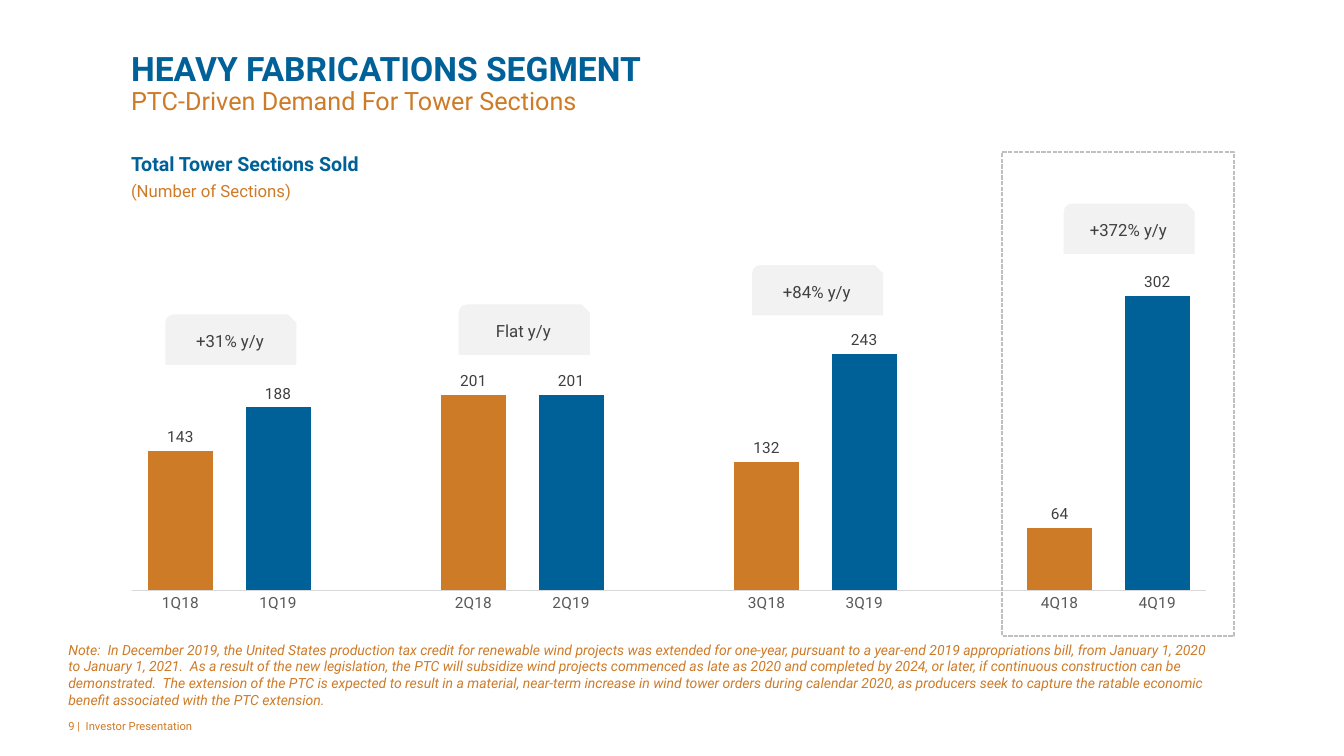
from lxml import etree
from pptx import Presentation
from pptx.chart.data import CategoryChartData as ChartData
from pptx.dml.color import RGBColor as RGB
from pptx.enum.chart import XL_CHART_TYPE as Chart, XL_LABEL_POSITION as Spot
from pptx.enum.chart import XL_TICK_MARK as Tick
from pptx.enum.dml import MSO_LINE as Dash
from pptx.enum.shapes import MSO_SHAPE as Shape
from pptx.enum.text import MSO_ANCHOR as Anchor, PP_ALIGN as Align
from pptx.oxml.ns import qn
from pptx.util import Emu, Pt

FONT = "Roboto"
BLUE, ORANGE = RGB(0x00, 0x61, 0x98), RGB(0xCE, 0x7B, 0x28)
WHITE, PALE = RGB(0xFF, 0xFF, 0xFF), RGB(0xF2, 0xF2, 0xF2)
DARK, GRAY = RGB(0x40, 0x40, 0x40), RGB(0x59, 0x59, 0x59)
RULE, EDGE = RGB(0xD9, 0xD9, 0xD9), RGB(0xBF, 0xBF, 0xBF)

# Each line of text: wording, size, colour, bold, italic
TITLE = [("HEAVY FABRICATIONS SEGMENT", 24, BLUE, True, False),
         ("PTC-Driven Demand For Tower Sections", 18, ORANGE, False, False)]
HEAD = [("Total Tower Sections Sold", 14, BLUE, True, False),
        ("(Number of Sections)", 12, ORANGE, False, False)]
FOOT = [("9 |  Investor Presentation", 8, ORANGE, False, False)]
NOTE = [(
    "Note:  In December 2019, the United States production tax credit for "
    "renewable wind projects was extended for one-year, pursuant to a year-end "
    "2019 appropriations bill, from January 1, 2020 to January 1, 2021.  As a "
    "result of the new legislation, the PTC will subsidize wind projects "
    "commenced as late as 2020 and completed by 2024, or later, if continuous "
    "construction can be demonstrated.  The extension of the PTC is expected to "
    "result in a material, near-term increase in wind tower orders during "
    "calendar 2020, as producers seek to capture the ratable economic benefit "
    "associated with the PTC extension.", 10, ORANGE, False, True)]

# Quarter, sections in 2018 and 2019, then the tag's wording, left and top
SALES = [("1Q", 143, 188, "+31% y/y", 164, 312),
         ("2Q", 201, 201, "Flat y/y", 455, 302),
         ("3Q", 132, 243, "+84% y/y", 746, 263),
         ("4Q", 64, 302, "+372% y/y", 1055, 202)]
TAG_W, TAG_H = 130, 50
PLOT = {"x": 0, "y": 0.06, "w": 0.965, "h": 0.865}


def px(n):
    """Turn px (100 to the inch) into EMU."""
    return Emu(n * 9144)


def write(shape, lines, anchor=Anchor.MIDDLE, align=Align.LEFT, after=0, pitch=None):
    frame = shape.text_frame
    frame.word_wrap = True
    frame.vertical_anchor = anchor
    for i, (text, size, color, bold, italic) in enumerate(lines):
        para = frame.add_paragraph() if i else frame.paragraphs[0]
        para.text = text
        para.alignment = align
        para.space_after = Pt(after)
        if pitch:
            para.line_spacing = pitch
        font = para.font
        font.name, font.size, font.color.rgb = FONT, Pt(size), color
        font.bold, font.italic = bold, italic
    return frame


def trim(frame):
    """Take away all four margins."""
    frame.margin_left = frame.margin_right = 0
    frame.margin_top = frame.margin_bottom = 0


def add_box(shapes, kind, box, fill=None):
    shape = shapes.add_shape(kind, *map(px, box))
    shape.shadow.inherit = False
    shape.line.fill.background()
    if fill is None:
        shape.fill.background()
    else:
        shape.fill.solid()
        shape.fill.fore_color.rgb = fill
    return shape


def add_text(shapes, box, lines, **style):
    return write(shapes.add_textbox(*map(px, box)), lines, **style)


def set_font(font, color):
    font.name, font.size, font.color.rgb = FONT, Pt(11), color


def set_plot(chart):
    """Fix the inner plot area as shares of the chart."""
    area = chart.element.find(".//" + qn("c:plotArea"))
    layout = area.find(qn("c:layout"))
    if layout is None:
        layout = etree.Element(qn("c:layout"))
        area.insert(0, layout)
    manual = etree.SubElement(layout, qn("c:manualLayout"))
    parts = [("layoutTarget", "inner"), ("xMode", "edge"), ("yMode", "edge")]
    for name, val in parts + list(PLOT.items()):
        etree.SubElement(manual, qn("c:" + name)).set("val", str(val))


def add_bars(shapes, box):
    cats, vals = [], []
    for quarter, old, new, *_ in SALES:
        if cats:
            cats.append("")
            vals.append(None)
        cats += [quarter + "18", quarter + "19"]
        vals += [old, new]
    data = ChartData()
    data.categories = cats
    data.add_series("Series 1", vals)
    frame = shapes.add_chart(Chart.COLUMN_CLUSTERED, *map(px, box), data)
    chart = frame.chart
    chart.has_legend = chart.has_title = False
    set_font(chart.font, GRAY)
    set_plot(chart)

    axis = chart.category_axis
    axis.major_tick_mark = axis.minor_tick_mark = Tick.NONE
    axis.format.line.color.rgb = RULE
    axis.format.line.width = Pt(0.75)
    set_font(axis.tick_labels.font, GRAY)
    scale = chart.value_axis
    scale.minimum_scale, scale.maximum_scale = 0, 350
    scale.has_major_gridlines = scale.visible = False

    plot = chart.plots[0]
    plot.gap_width, plot.overlap, plot.vary_by_categories = 50, -27, False
    bars = plot.series[0]
    bars.format.fill.solid()
    bars.format.fill.fore_color.rgb = BLUE
    for i in range(0, len(cats), 3):
        fill = bars.points[i].format.fill
        fill.solid()
        fill.fore_color.rgb = ORANGE
    labels = bars.data_labels
    labels.show_value, labels.position = True, Spot.OUTSIDE_END
    set_font(labels.font, DARK)


def main():
    deck = Presentation()
    deck.slide_width, deck.slide_height = px(1333), px(750)
    shapes = deck.slides.add_slide(deck.slide_layouts[6]).shapes

    trim(add_text(shapes, (130, 52, 1081, 63), TITLE, anchor=Anchor.BOTTOM, pitch=0.9))
    add_text(shapes, (58, 700, 300, 40), FOOT)
    head = add_box(shapes, Shape.RECTANGLE, (130, 151, 623, 48), WHITE)
    trim(write(head, HEAD, anchor=Anchor.TOP, after=3.3))

    add_bars(shapes, (130, 224, 1105, 391))
    for *_, text, left, top in SALES:
        tag = add_box(shapes, Shape.SNIP_ROUND_RECTANGLE, (left, top, TAG_W, TAG_H), PALE)
        write(tag, [(text, 12, DARK, False, False)], align=Align.CENTER)

    note = add_text(shapes, (58, 658, 1154, 40), NOTE)
    note.margin_bottom = px(22)

    focus = add_box(shapes, Shape.RECTANGLE, (994, 151, 230, 480))
    focus.line.color.rgb = EDGE
    focus.line.width = Pt(1)
    focus.line.dash_style = Dash.SQUARE_DOT
    deck.save("out.pptx")


if __name__ == "__main__":
    main()
